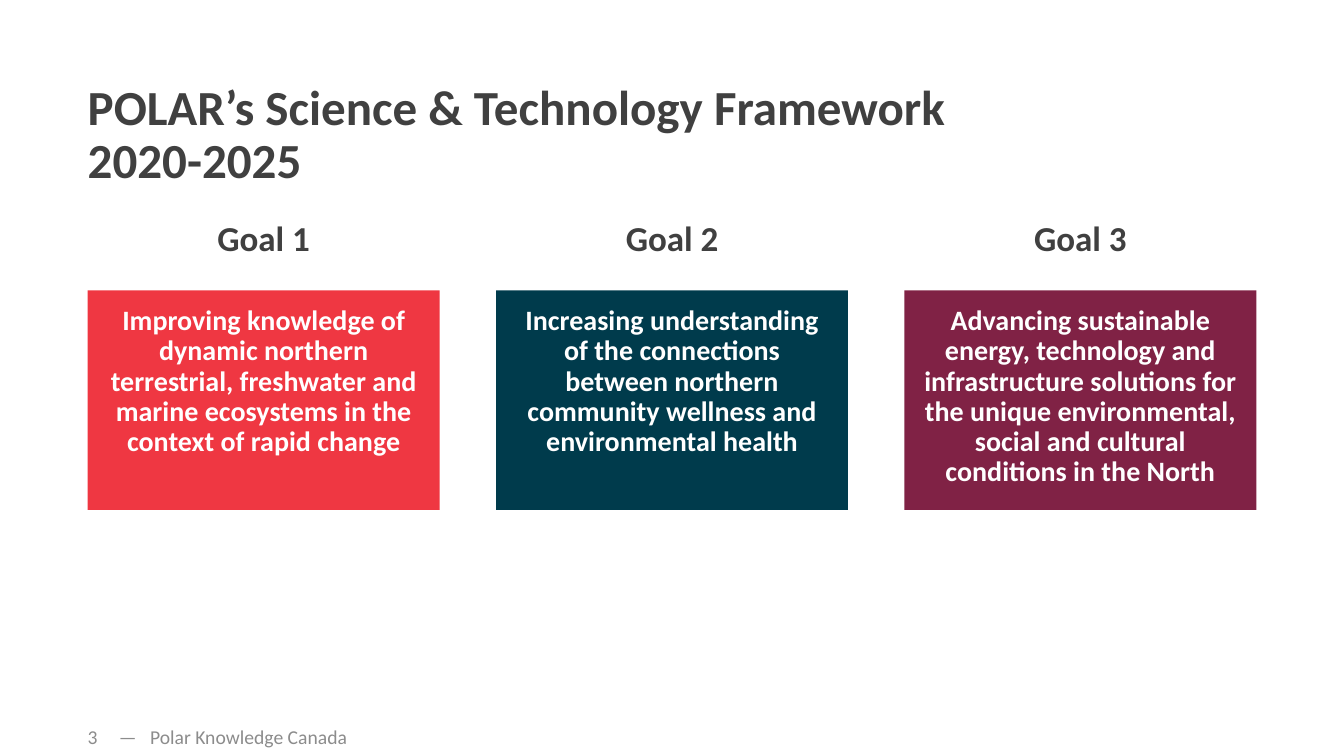
from dataclasses import dataclass

from lxml.etree import SubElement
from pptx import Presentation
from pptx.dml.color import RGBColor
from pptx.enum.shapes import MSO_SHAPE
from pptx.enum.text import MSO_ANCHOR, PP_ALIGN
from pptx.oxml.ns import qn
from pptx.shapes.autoshape import Shape
from pptx.slide import Slide
from pptx.util import Pt

PX = 9144  # EMU per px, 100 px to the inch
FONT = "Calibri"
WHITE = RGBColor(0xFF, 0xFF, 0xFF)
DARK_GREY = RGBColor(0x40, 0x40, 0x40)
FOOTER_GREY = RGBColor(0x8C, 0x8C, 0x8C)
RED = RGBColor(0xEF, 0x37, 0x42)
TEAL = RGBColor(0x00, 0x3B, 0x4C)
PLUM = RGBColor(0x80, 0x22, 0x45)

LEFT = 87
COLUMN_WIDTH = 349
COLUMN_STEP = 405
PADDING = 16


@dataclass(frozen=True)
class Box:
    left: int
    top: int
    width: int
    height: int


@dataclass(frozen=True)
class TextStyle:
    size: int
    color: RGBColor
    bold: bool = True
    alignment: PP_ALIGN = PP_ALIGN.LEFT
    anchor: MSO_ANCHOR = MSO_ANCHOR.MIDDLE
    inset_x: int = 0
    inset_y: int = 0
    line_spacing: float = 0.9
    tab: int = 0


@dataclass(frozen=True)
class Goal:
    heading: str
    description: str
    color: RGBColor


TITLE_STYLE = TextStyle(35, DARK_GREY, inset_y=5)
HEADING_STYLE = TextStyle(25, DARK_GREY, True, PP_ALIGN.CENTER, MSO_ANCHOR.BOTTOM, PADDING, PADDING)
CARD_STYLE = TextStyle(20, WHITE, True, PP_ALIGN.CENTER, MSO_ANCHOR.TOP, PADDING, PADDING)
NUMBER_STYLE = TextStyle(14, FOOTER_GREY, False, line_spacing=1.0)
FOOTER_STYLE = TextStyle(14, FOOTER_GREY, False, inset_x=10, inset_y=5, line_spacing=1.0, tab=31)

GOALS = [
    Goal("Goal 1", "Improving knowledge of dynamic northern terrestrial, freshwater and "
         "marine ecosystems in the context of rapid change", RED),
    Goal("Goal 2", "Increasing understanding of the connections between northern "
         "community wellness and environmental health", TEAL),
    Goal("Goal 3", "Advancing sustainable energy, technology and infrastructure solutions for "
         "the unique environmental, social and cultural conditions in the North", PLUM),
]


def write_text(shape: Shape, text: str, style: TextStyle) -> None:
    text_frame = shape.text_frame
    text_frame.word_wrap = True
    text_frame.vertical_anchor = style.anchor
    text_frame.margin_left = text_frame.margin_right = style.inset_x * PX
    text_frame.margin_top = text_frame.margin_bottom = style.inset_y * PX
    text_frame.text = text
    paragraph = text_frame.paragraphs[0]
    paragraph.alignment = style.alignment
    paragraph.line_spacing = style.line_spacing
    if style.tab:
        tab_list = SubElement(paragraph._p.get_or_add_pPr(), qn("a:tabLst"))
        SubElement(tab_list, qn("a:tab"), pos=str(style.tab * PX), algn="l")
    for run in paragraph.runs:
        run.font.name = FONT
        run.font.size = Pt(style.size)
        run.font.bold = style.bold
        run.font.color.rgb = style.color


def add_text(slide: Slide, box: Box, text: str, style: TextStyle) -> None:
    shape = slide.shapes.add_textbox(
        box.left * PX, box.top * PX, box.width * PX, box.height * PX)
    write_text(shape, text, style)


def add_card(slide: Slide, box: Box, text: str, color: RGBColor) -> None:
    shape = slide.shapes.add_shape(
        MSO_SHAPE.RECTANGLE, box.left * PX, box.top * PX, box.width * PX, box.height * PX)
    shape.shadow.inherit = False
    shape.fill.solid()
    shape.fill.fore_color.rgb = color
    shape.line.fill.background()
    write_text(shape, text, CARD_STYLE)


def main() -> None:
    presentation = Presentation()
    presentation.slide_width = 1333 * PX
    presentation.slide_height = 750 * PX
    slide = presentation.slides.add_slide(presentation.slide_layouts[6])

    # Title
    add_text(slide, Box(LEFT, 87, 1159, 97),
             "POLAR’s Science & Technology Framework\v2020-2025", TITLE_STYLE)

    # Goal columns
    for index, goal in enumerate(GOALS):
        left = LEFT + index * COLUMN_STEP
        add_text(slide, Box(left, 198, COLUMN_WIDTH, 75), goal.heading, HEADING_STYLE)
        add_card(slide, Box(left, 288, COLUMN_WIDTH, 218), goal.description, goal.color)

    # Footer
    add_text(slide, Box(LEFT, 711, 49, 39), "3", NUMBER_STYLE)
    add_text(slide, Box(108, 711, 341, 40), "—\tPolar Knowledge Canada", FOOTER_STYLE)

    presentation.save("out.pptx")


if __name__ == "__main__":
    main()
